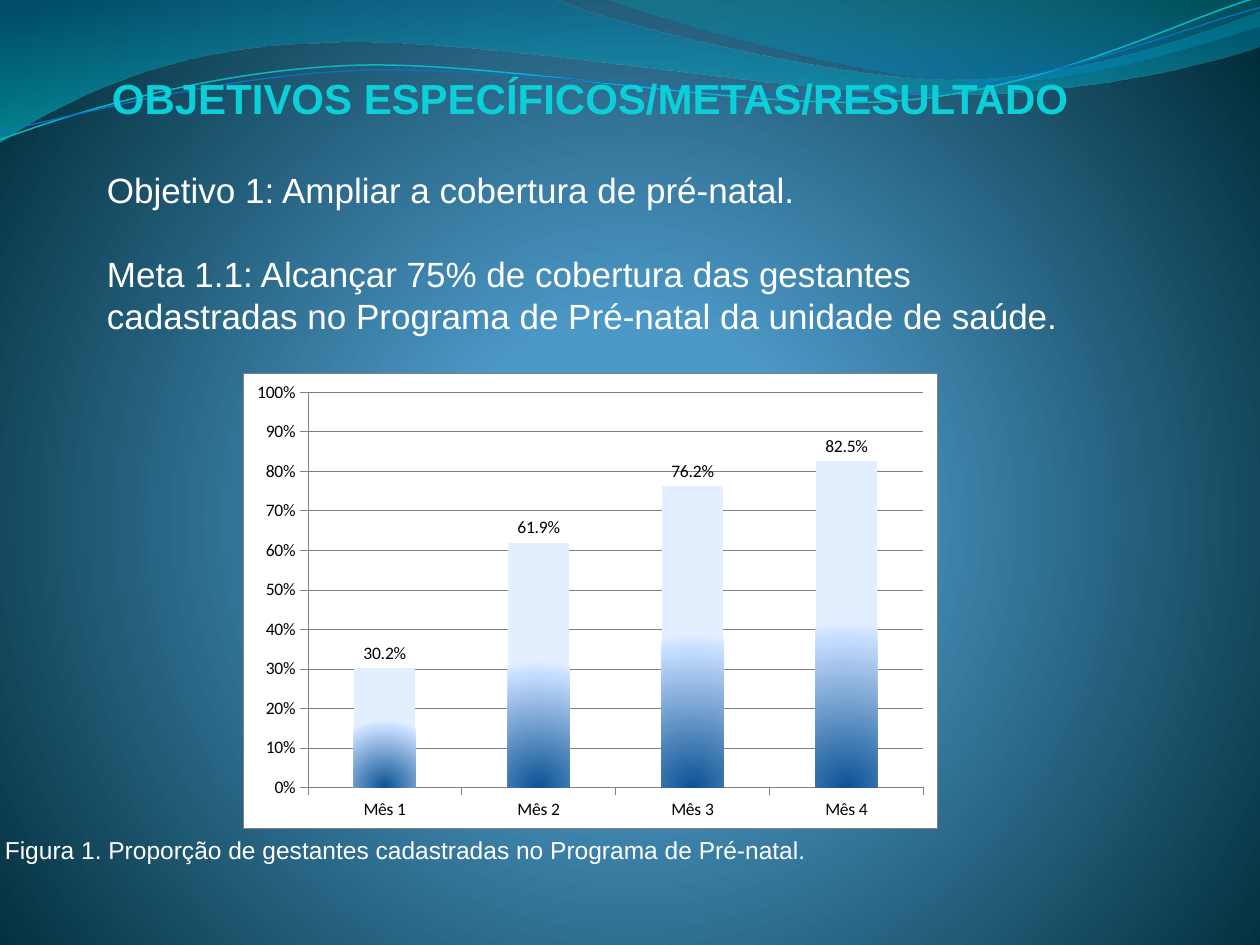
"""Build the slide on prenatal coverage goals and results."""
from dataclasses import dataclass
from math import cos, radians, sin
from typing import Optional

from lxml import etree
from pptx import Presentation
from pptx.chart.data import CategoryChartData
from pptx.dml.color import RGBColor
from pptx.enum.chart import XL_CHART_TYPE, XL_LABEL_POSITION, XL_TICK_MARK
from pptx.enum.text import MSO_ANCHOR, PP_ALIGN
from pptx.oxml import parse_xml
from pptx.oxml.ns import qn
from pptx.util import Cm, Pt

COLUMN = XL_CHART_TYPE.COLUMN_CLUSTERED
OUTSIDE = XL_TICK_MARK.OUTSIDE
OUTSIDE_END = XL_LABEL_POSITION.OUTSIDE_END
LEFT, CENTER, RIGHT, TOP = PP_ALIGN.LEFT, PP_ALIGN.CENTER, PP_ALIGN.RIGHT, MSO_ANCHOR.TOP

WHITE = RGBColor(0xFF, 0xFF, 0xFF)
BLACK = RGBColor(0x00, 0x00, 0x00)
GRAY = RGBColor(0x80, 0x80, 0x80)
CYAN = RGBColor(0x0B, 0xD0, 0xD9)
TEAL = RGBColor(0x0A, 0xB8, 0xBF)
BLUE = RGBColor(0x0F, 0x6F, 0xC6)
SKY = RGBColor(0x4A, 0xA0, 0xD6)
STEEL = RGBColor(0x4C, 0x98, 0xC7)
NIGHT = RGBColor(0x00, 0x2C, 0x38)
OCEAN = RGBColor(0x00, 0x74, 0xA1)
AQUA = RGBColor(0x00, 0xC6, 0xCF)
LAGOON = RGBColor(0x00, 0xA1, 0xA9)
AZURE = RGBColor(0x00, 0x8B, 0xBF)
NAVY = RGBColor(0x0B, 0x53, 0x94)
PALE = RGBColor(0xC6, 0xDD, 0xFF)
ICE = RGBColor(0xE3, 0xEE, 0xFF)

C_NS = "http://schemas.openxmlformats.org/drawingml/2006/chart"
A_NS = "http://schemas.openxmlformats.org/drawingml/2006/main"
INCH = 2.54
TILT = -2.7
DOWNWARD = '<a:lin ang="5400000" scaled="0"/>'


@dataclass
class Stop:
    pos: int
    color: RGBColor
    alpha: int = 100


@dataclass
class Wave:
    start: tuple
    segments: list
    stops: Optional[list] = None
    line: Optional[RGBColor] = None
    width: float = 0
    pivot: Optional[tuple] = None


RIBBONS = [
    Wave((0, 0), [
        (4.4, -0.01), (4.76, 0.17, 6.64, 0.63, 7.58, 0.63),
        (8.53, 0.63, 9.58, 0.26, 10, 0.09), (10.01, 0.36),
        (9.83, 0.44, 8.7, 0.76, 7.46, 0.75), (6.22, 0.75, 3.82, 0.28, 2.57, 0.34),
        (1.29, 0.36, 0.46, 0.83, -0.01, 1.13)],
        stops=[Stop(0, OCEAN, 45), Stop(100, AQUA, 55)]),
    Wave((4.79, -0.01), [
        (5.09, 0.11, 6.82, 0.62, 7.69, 0.65),
        (8.56, 0.69, 9.61, 0.32, 10, 0.21), (10, 0)],
        stops=[Stop(0, LAGOON, 30), Stop(80, AZURE, 45)]),
]
STRANDS = [
    Wave((0, 1.11), [
        (0.48, 0.93, 1.58, 0.57, 2.77, 0.52), (3.95, 0.47, 5.93, 0.89, 7.13, 0.8),
        (8.33, 0.71, 9.38, 0.15, 9.98, -0.02)],
        line=TEAL, width=0.85, pivot=(4.99, 0.58)),
    Wave((0, 1.04), [
        (0.47, 0.96, 1.64, 0.61, 2.83, 0.56), (4.03, 0.51, 5.97, 0.84, 7.17, 0.75),
        (8.36, 0.67, 9.41, 0.21, 10, 0.06)],
        line=BLUE, width=0.75, pivot=(5, 0.59)),
]


def set_gradient(fill, root, stops: list, shade: str) -> None:
    fill.gradient()
    grad = root.find(".//" + qn("a:gradFill"))
    for child in list(grad):
        grad.remove(child)
    items = "".join(
        f'<a:gs pos="{s.pos * 1000}"><a:srgbClr val="{s.color}">'
        f'<a:alpha val="{s.alpha * 1000}"/></a:srgbClr></a:gs>' for s in stops)
    xml = f'<a:x xmlns:a="{A_NS}"><a:gsLst>{items}</a:gsLst>{shade}</a:x>'
    grad.extend(list(parse_xml(xml)))


def circle(left: int, top: int, right: int, bottom: int) -> str:
    return (f'<a:path path="circle"><a:fillToRect l="{left * 1000}" t="{top * 1000}" '
            f'r="{right * 1000}" b="{bottom * 1000}"/></a:path>')


def place(point: tuple, pivot: Optional[tuple]) -> tuple:
    x, y = point
    if pivot:
        turn = radians(-TILT)
        dx, dy = x - pivot[0], y - pivot[1]
        x = pivot[0] + dx * cos(turn) - dy * sin(turn)
        y = pivot[1] + dx * sin(turn) + dy * cos(turn)
    return Cm(x * INCH), Cm(y * INCH)


def draw_wave(shapes, wave: Wave) -> None:
    ends = [place(seg[-2:], wave.pivot) for seg in wave.segments]
    fb = shapes.build_freeform(*place(wave.start, wave.pivot), scale=1.0)
    fb.add_line_segments(ends, close=wave.stops is not None)
    sp = fb.convert_to_shape()
    for seg, node in zip(wave.segments, sp._element.findall(".//" + qn("a:lnTo"))):
        if len(seg) == 6:
            node.tag = qn("a:cubicBezTo")
            for i, point in enumerate((seg[:2], seg[2:4])):
                x, y = place(point, wave.pivot)
                pt = etree.Element(qn("a:pt"), x=str(x - sp.left), y=str(y - sp.top))
                node.insert(i, pt)
    sp.shadow.inherit = False
    if wave.stops:
        set_gradient(sp.fill, sp._element, wave.stops, DOWNWARD)
        sp.line.fill.background()
    else:
        sp.rotation = TILT
        sp.fill.background()
        sp.line.color.rgb = wave.line
        sp.line.width = Pt(wave.width)


def add_line(p, text: str, size: int, color: RGBColor, bold: bool = False,
             align=LEFT, leading: Optional[int] = None, gap: int = 0) -> None:
    p.alignment = align
    p.space_before = Pt(gap)
    if leading:
        p.line_spacing = Pt(leading)
    r = p.add_run()
    r.text = text
    r.font.name = "Arial"
    r.font.size = Pt(size)
    r.font.bold = bold
    r.font.color.rgb = color


def style_line(line) -> None:
    line.color.rgb = GRAY
    line.width = Pt(0.25)


def frame_chart(chart) -> None:
    area = chart._chartSpace.find(qn("c:chart"))
    area.addnext(parse_xml(
        f'<c:spPr xmlns:c="{C_NS}" xmlns:a="{A_NS}"><a:solidFill><a:srgbClr val="{WHITE}"/>'
        f'</a:solidFill><a:ln w="3175"><a:solidFill><a:srgbClr val="{GRAY}"/>'
        '</a:solidFill></a:ln></c:spPr>'))


def add_coverage_chart(slide) -> None:
    data = CategoryChartData(number_format="0.0%")
    data.categories = [f"Mês {n}" for n in range(1, 5)]
    data.add_series("Series 1", (0.302, 0.619, 0.762, 0.825))
    chart = slide.shapes.add_chart(COLUMN, Cm(4.9), Cm(7.52), Cm(14), Cm(9.19), data).chart
    chart.has_legend = chart.has_title = False
    chart.font.name = "Calibri"
    chart.font.size = Pt(10)
    chart.font.color.rgb = BLACK
    for axis in (chart.category_axis, chart.value_axis):
        axis.major_tick_mark = OUTSIDE
        style_line(axis.format.line)
    axis = chart.value_axis
    axis.minimum_scale, axis.maximum_scale, axis.major_unit = 0, 1, 0.1
    axis.tick_labels.number_format = "0%"
    axis.tick_labels.number_format_is_linked = False
    style_line(axis.major_gridlines.format.line)
    plot = chart.plots[0]
    plot.gap_width = 150
    plot.vary_by_categories = False
    ser = plot.series[0]
    stops = [Stop(0, NAVY), Stop(90, PALE), Stop(100, ICE)]
    set_gradient(ser.format.fill, ser._element, stops, circle(50, 100, 50, 0))
    labels = ser.data_labels
    labels.show_value = True
    labels.number_format = "0.0%"
    labels.number_format_is_linked = False
    labels.position = OUTSIDE_END
    frame_chart(chart)


def main() -> None:
    prs = Presentation()
    prs.slide_width, prs.slide_height = Cm(25.4), Cm(19.05)
    slide = prs.slides.add_slide(prs.slide_layouts[5])
    set_gradient(slide.background.fill, slide._element,
                 [Stop(0, SKY), Stop(25, STEEL), Stop(100, NIGHT)], circle(10, 110, 10, 100))
    for wave in RIBBONS:
        draw_wave(slide.shapes, wave)
    group = slide.shapes.add_group_shape()
    for wave in STRANDS:
        draw_wave(group.shapes, wave)

    caption = slide.shapes.add_textbox(Cm(-1.5), Cm(16.71), Cm(21.82), Cm(1.8))
    tf = caption.text_frame
    tf.word_wrap = True
    tf.margin_left, tf.margin_right = 0, Cm(4.06)
    add_line(tf.paragraphs[0], "Figura 1. Proporção de gestantes cadastradas no Programa "
             "de Pré-natal.", 14, WHITE, align=RIGHT)

    title = slide.shapes.title
    title.left, title.top, title.width, title.height = Cm(1.9), Cm(0.61), Cm(20), Cm(8.71)
    slide.shapes._spTree.append(title._element)
    tf = title.text_frame
    tf.word_wrap = True
    tf.vertical_anchor = TOP
    tf.margin_top = Cm(0.86)
    add_line(tf.paragraphs[0], "OBJETIVOS ESPECÍFICOS/METAS/RESULTADO", 24, CYAN, True, CENTER)
    add_line(tf.add_paragraph(), "Objetivo 1: Ampliar a cobertura de pré-natal.",
             20, WHITE, leading=24, gap=26)
    add_line(tf.add_paragraph(), "Meta 1.1: Alcançar 75% de cobertura das gestantes "
             "cadastradas no Programa de Pré-natal da unidade de saúde.",
             20, WHITE, leading=24, gap=24)
    add_coverage_chart(slide)
    prs.save("out.pptx")


if __name__ == "__main__":
    main()
